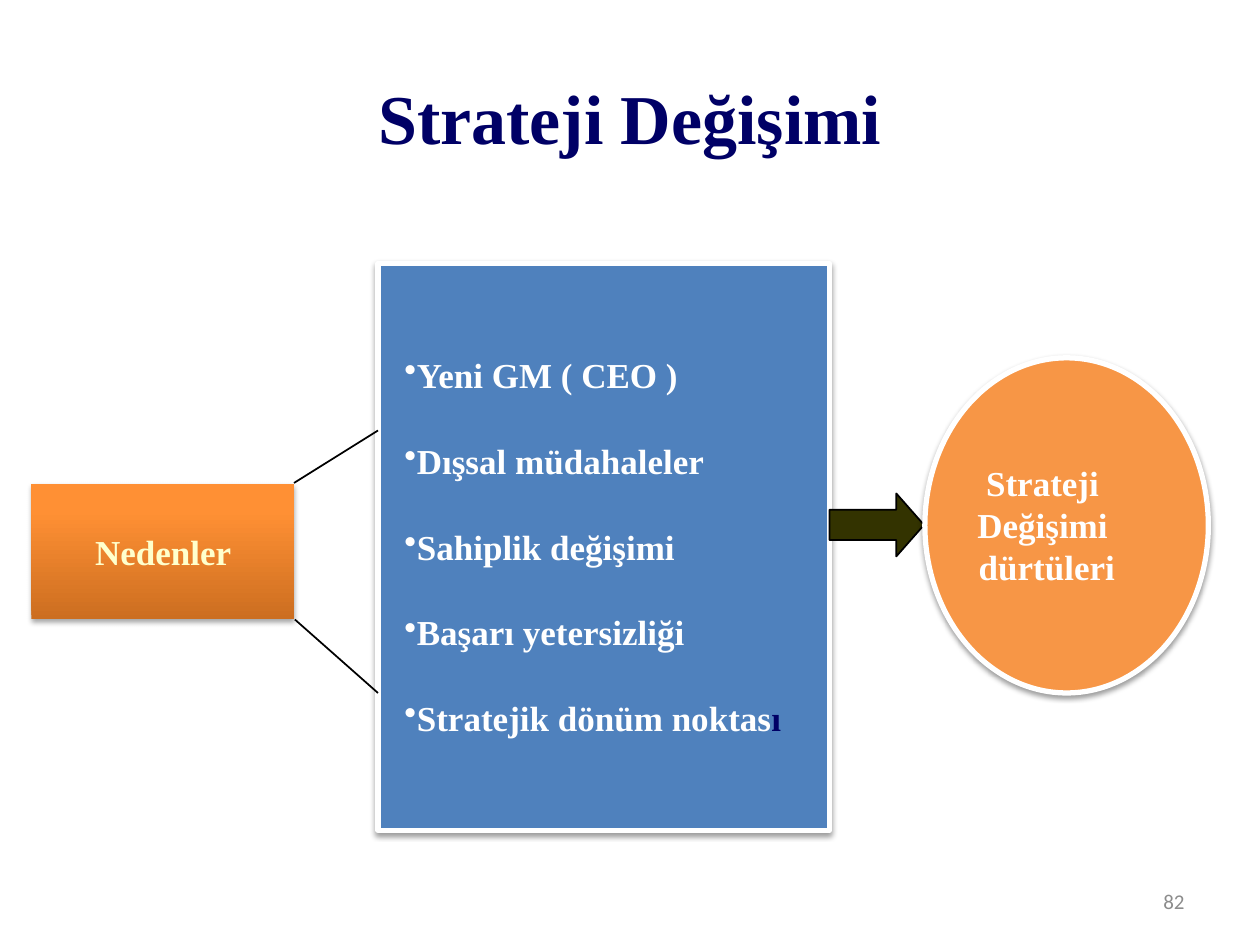
from lxml.etree import SubElement
from pptx import Presentation
from pptx.dml.color import RGBColor as RGB
from pptx.enum.shapes import MSO_CONNECTOR as CONN, MSO_SHAPE as SHAPE
from pptx.enum.text import MSO_ANCHOR as ANCHOR, PP_ALIGN as ALIGN
from pptx.oxml.ns import qn
from pptx.util import Pt

COLORS = {
    "navy": "000066", "white": "FFFFFF", "cream": "FFFFCC", "black": "000000",
    "blue": "4F81BD", "orange": "F79646", "olive": "333300", "grey": "8C8C8C",
}
ORANGE_STOPS = [(0, "CC6E20"), (80, "FF9034"), (100, "FF9136")]


class Deck:
    font = "Times New Roman"
    size = 20

    def __init__(self, width, height):
        self.prs = Presentation()
        self.prs.slide_width, self.prs.slide_height = Pt(width), Pt(height)
        self.s = self.prs.slides.add_slide(self.prs.slide_layouts[6])

    def color(self, name):
        return RGB.from_string(COLORS[name])

    def shape(self, kind, box, fill=None, line=None, weight=1, shadow=None):
        sp = self.s.shapes.add_shape(kind, *map(Pt, box))
        sp.shadow.inherit = False
        if fill:
            sp.fill.solid()
            sp.fill.fore_color.rgb = self.color(fill)
        if line:
            sp.line.color.rgb = self.color(line)
            sp.line.width = Pt(weight)
        else:
            sp.line.fill.background()
        if shadow:
            self.shadow(sp, *shadow)
        return sp

    def shadow(self, sp, alpha, dist):
        effects = sp._element.spPr.find(qn("a:effectLst"))
        outer = SubElement(effects, qn("a:outerShdw"), blurRad=str(Pt(3.1)),
                           dist=str(Pt(dist)), dir="5400000", rotWithShape="0")
        clr = SubElement(outer, qn("a:srgbClr"), val=COLORS["black"])
        SubElement(clr, qn("a:alpha"), val=str(alpha * 1000))

    def gradient(self, sp, stops, angle):
        sp.fill.gradient()
        sp.fill.gradient_angle = angle
        gs_list = sp._element.spPr.find(qn("a:gradFill")).find(qn("a:gsLst"))
        for gs in list(gs_list):
            gs_list.remove(gs)
        for pos, value in stops:
            gs = SubElement(gs_list, qn("a:gs"), pos=str(pos * 1000))
            SubElement(gs, qn("a:srgbClr"), val=value)

    def text(self, box, paragraphs, color, align=ALIGN.CENTER, size=None,
             font=None, bold=True, bullet=None, gap=0):
        tf = self.s.shapes.add_textbox(*map(Pt, box)).text_frame
        tf.word_wrap = True
        tf.vertical_anchor = ANCHOR.MIDDLE
        for i, runs in enumerate(paragraphs):
            p = tf.paragraphs[0] if i == 0 else tf.add_paragraph()
            p.alignment = align
            p.space_before = Pt(gap if i else 0)
            if bullet:
                SubElement(p._p.get_or_add_pPr(), qn("a:buChar"), char=bullet)
            for content, own_color in runs:
                r = p.add_run()
                r.text = content
                r.font.name = font or self.font
                r.font.size = Pt(size or self.size)
                r.font.bold = bold
                r.font.color.rgb = self.color(own_color or color)

    def line(self, x1, y1, x2, y2):
        c = self.s.shapes.add_connector(CONN.STRAIGHT, *map(Pt, (x1, y1, x2, y2)))
        c.line.color.rgb = self.color("black")
        c.line.width = Pt(1)
        SubElement(c._element.spPr, qn("a:effectLst"))


def main():
    deck = Deck(720, 540)
    deck.text((36, 21.6, 648, 90), [[("Strateji Değişimi", None)]], "navy", size=40)

    causes = deck.shape(SHAPE.RECTANGLE, (18, 276.5, 150, 77.5), shadow=(35, 1.8))
    deck.gradient(causes, ORANGE_STOPS, 90)
    deck.text((26, 280, 134.5, 70), [[("Nedenler", None)]], "cream")

    deck.shape(SHAPE.RECTANGLE, (216, 150.5, 258, 324), "blue", "white", 3, (38, 1.6))
    reasons = ["Yeni GM ( CEO )", "Dışsal müdahaleler", "Sahiplik değişimi",
               "Başarı yetersizliği", "Stratejik dönüm noktas"]
    paragraphs = [[(reason, None)] for reason in reasons]
    paragraphs[-1].append(("ı", "navy"))
    deck.text((224, 154, 243, 316), paragraphs, "white", ALIGN.LEFT, bullet="•", gap=25)

    deck.line(168, 276, 216, 246)
    deck.line(168.5, 354, 216, 396)

    arrow = deck.shape(SHAPE.RIGHT_ARROW, (474, 282, 54, 36), "olive", "black")
    arrow.adjustments[0], arrow.adjustments[1] = 0.48, 0.44

    deck.shape(SHAPE.OVAL, (528.5, 204.5, 162, 191.5), "orange", "white", 3, (38, 1.6))
    result = ["Strateji ", "Değişimi ", "dürtüleri"]
    deck.text((535.5, 235, 125.5, 130), [[(word, None)] for word in result], "white")

    deck.text((516, 500.5, 168, 28.5), [[("82", None)]], "grey", ALIGN.RIGHT,
              size=12, font="Calibri", bold=False)
    deck.prs.save("out.pptx")


if __name__ == "__main__":
    main()
